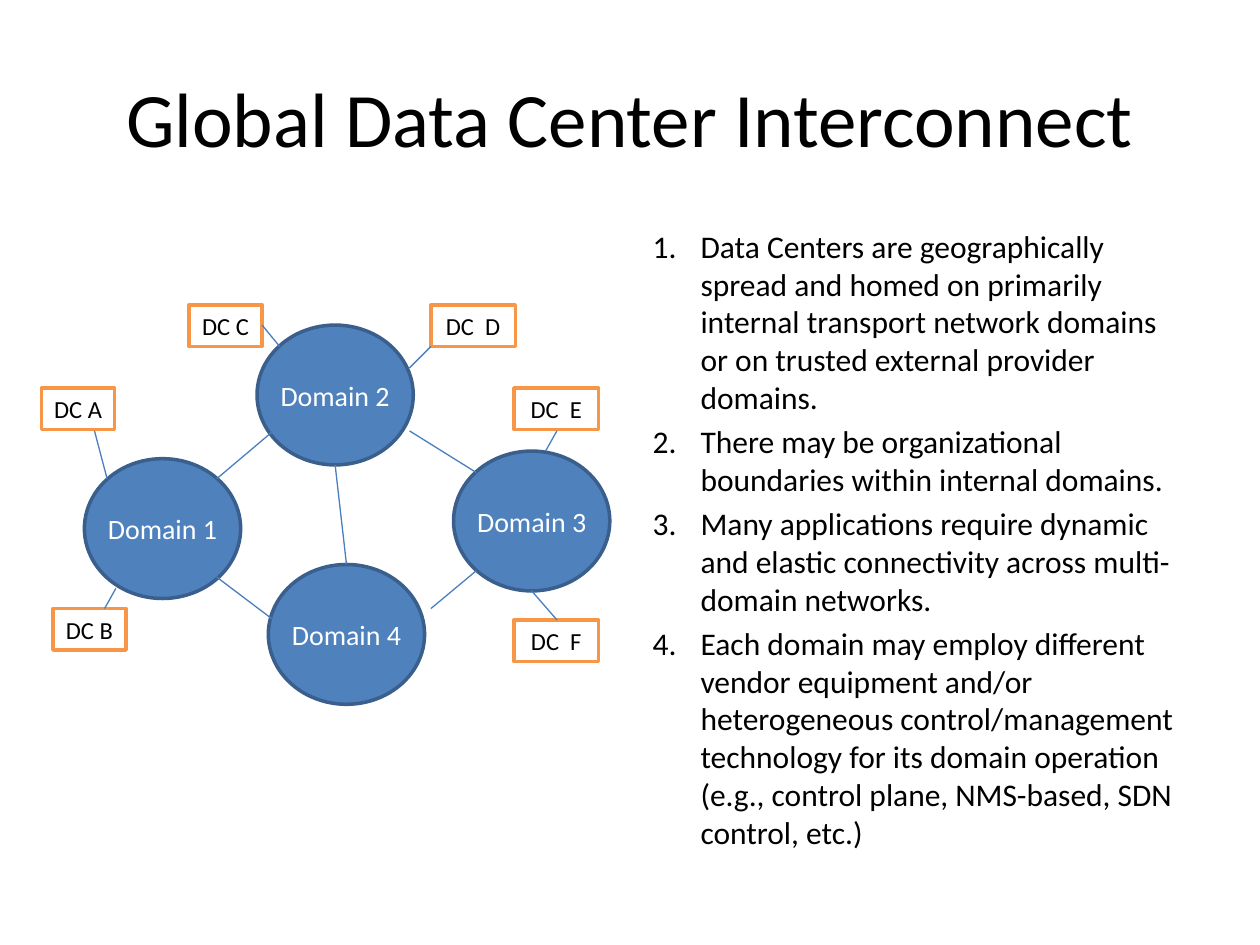
from dataclasses import dataclass

from lxml.etree import SubElement
from pptx import Presentation
from pptx.dml.color import RGBColor
from pptx.enum.shapes import MSO_CONNECTOR as Connector, MSO_SHAPE as Shape
from pptx.enum.text import MSO_ANCHOR as Anchor, MSO_AUTO_SIZE as AutoSize, PP_ALIGN as Align
from pptx.oxml.ns import qn
from pptx.util import Inches, Pt


@dataclass(frozen=True)
class Theme:
    font: str = "Calibri"
    ink: str = "000000"
    paper: str = "FFFFFF"
    domain_fill: str = "4F81BD"
    domain_edge: str = "3A5F8C"
    center_edge: str = "F79646"
    link: str = "4B7EBC"
    title_size: int = 44
    list_size: int = 18
    domain_size: int = 16
    center_size: int = 14
    edge_width: float = 2
    link_width: float = 0.75


THEME = Theme()
TITLE = "Global Data Center Interconnect"
POINTS = [
    "Data Centers are geographically spread and homed on primarily  internal transport "
    "network domains or on trusted external provider domains.",
    "There may be organizational boundaries within internal domains.",
    "Many applications require dynamic and elastic connectivity across multi-domain networks.",
    "Each domain may employ different vendor equipment and/or  heterogeneous "
    "control/management technology for its domain operation (e.g., control plane, "
    "NMS-based, SDN control, etc.)",
]
DOMAIN_SIZE = (1.24, 1.11)
DOMAINS = [
    ("Domain 2", 2.04, 2.58),
    ("Domain 1", 0.67, 3.64),
    ("Domain 3", 3.6, 3.58),
    ("Domain 4", 2.13, 4.48),
]
CENTER_HEIGHT = 0.33
CENTERS = [
    ("DC A", 0.33, 3.08, 0.58),
    ("DC B", 0.42, 4.83, 0.58),
    ("DC C", 1.5, 2.42, 0.58),
    ("DC  D", 3.42, 2.42, 0.67),
    ("DC  E", 4.08, 3.08, 0.67),
    ("DC  F", 4.08, 4.92, 0.67),
]
DOMAIN_LINKS = [
    (1.72, 3.8, 2.17, 3.42),
    (3.25, 3.42, 3.78, 3.75),
    (1.72, 4.58, 2.17, 4.92),
    (3.42, 4.83, 3.78, 4.53),
    (2.66, 3.69, 2.75, 4.48),
]
CENTER_LINKS = [
    (0.75, 3.42, 0.85, 3.8),
    (0.83, 4.83, 0.92, 4.67),
    (2.08, 2.58, 2.22, 2.75),
    (3.25, 2.92, 3.42, 2.75),
    (4.42, 3.42, 4.33, 3.58),
    (4.22, 4.69, 4.42, 4.92),
]


def color(value):
    return RGBColor.from_string(value)


def write(para, text, *, size, ink=THEME.ink, align=None):
    para.alignment = align
    span = para.add_run()
    span.text = text
    span.font.name = THEME.font
    span.font.size = Pt(size)
    span.font.color.rgb = color(ink)


def place(shape, left, top, width, height):
    shape.left, shape.top = Inches(left), Inches(top)
    shape.width, shape.height = Inches(width), Inches(height)


def number(para, indent):
    """Give the paragraph an automatic number and a hanging indent."""
    props = para._p.get_or_add_pPr()
    props.set("marL", str(Inches(indent)))
    props.set("indent", str(-Inches(indent)))
    SubElement(props, qn("a:buFont"), typeface="+mj-lt")
    SubElement(props, qn("a:buAutoNum"), type="arabicPeriod")


def fill_title(title):
    place(title, 0.5, 0.3, 9, 1.25)
    frame = title.text_frame
    frame.auto_size = AutoSize.NONE
    frame.vertical_anchor = Anchor.MIDDLE
    write(frame.paragraphs[0], TITLE, size=THEME.title_size, align=Align.CENTER)


def fill_list(body):
    place(body, 5.08, 1.75, 4.42, 4.95)
    frame = body.text_frame
    frame.auto_size = AutoSize.NONE
    for index, point in enumerate(POINTS):
        para = frame.add_paragraph() if index else frame.paragraphs[0]
        number(para, 0.38)
        write(para, point, size=THEME.list_size)


def add_node(page, kind, text, bounds, *, fill, edge, size, ink, inset):
    node = page.shapes.add_shape(kind, *map(Inches, bounds))
    node.shadow.inherit = False
    node.fill.solid()
    node.fill.fore_color.rgb = color(fill)
    node.line.color.rgb = color(edge)
    node.line.width = Pt(THEME.edge_width)
    frame = node.text_frame
    frame.word_wrap = True
    frame.vertical_anchor = Anchor.MIDDLE
    frame.margin_left = frame.margin_right = Inches(inset)
    write(frame.paragraphs[0], text, size=size, ink=ink, align=Align.CENTER)


def add_domain(page, text, left, top):
    add_node(page, Shape.OVAL, text, (left, top, *DOMAIN_SIZE), fill=THEME.domain_fill,
             edge=THEME.domain_edge, size=THEME.domain_size, ink=THEME.paper, inset=0)


def add_center(page, text, left, top, width):
    add_node(page, Shape.RECTANGLE, text, (left, top, width, CENTER_HEIGHT), fill=THEME.paper,
             edge=THEME.center_edge, size=THEME.center_size, ink=THEME.ink, inset=0.05)


def add_link(page, ends):
    link = page.shapes.add_connector(Connector.STRAIGHT, *map(Inches, ends))
    link.line.color.rgb = color(THEME.link)
    link.line.width = Pt(THEME.link_width)
    SubElement(link._element.spPr, qn("a:effectLst"))


def main():
    deck = Presentation()
    deck.slide_width, deck.slide_height = Inches(10), Inches(7.5)
    page = deck.slides.add_slide(deck.slide_layouts[1])
    fill_title(page.shapes.title)
    fill_list(page.placeholders[1])
    for domain in DOMAINS:
        add_domain(page, *domain)
    for center in CENTERS:
        add_center(page, *center)
    for ends in DOMAIN_LINKS + CENTER_LINKS:
        add_link(page, ends)
    deck.save("out.pptx")


if __name__ == "__main__":
    main()
